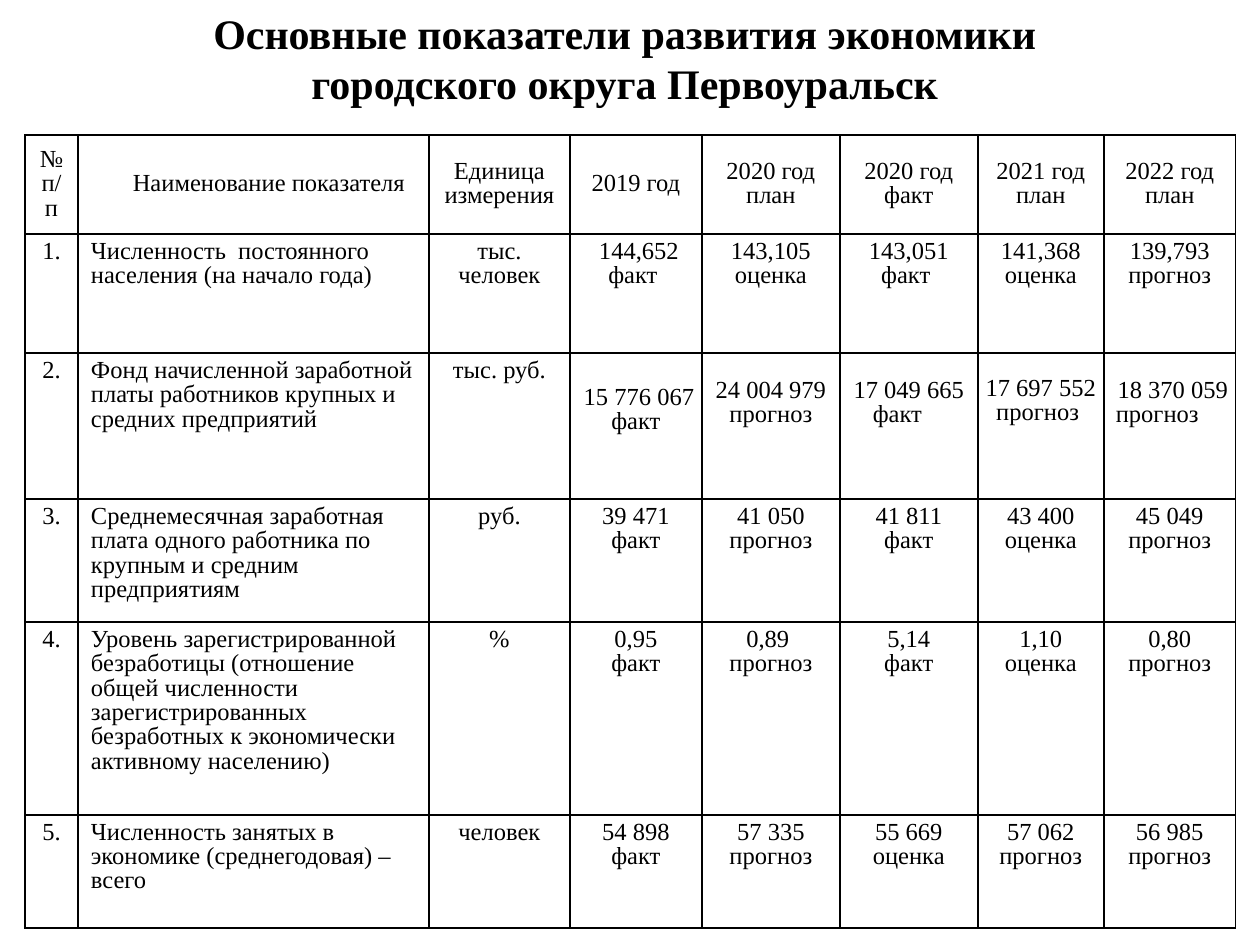
import pptx
import pptx.dml.color
import pptx.enum.text
import pptx.oxml
import pptx.oxml.ns
import pptx.util

PX = 914400 / 126
FONT = "Times New Roman"
BLACK, WHITE = "000000", "FFFFFF"
ALIGN = pptx.enum.text.PP_ALIGN
ANCHOR = pptx.enum.text.MSO_ANCHOR

TITLE = "Основные показатели развития экономики \nгородского округа Первоуральск "
COLUMNS = [53, 351, 141, 132, 138, 138, 126, 132]
ROWS = [99, 119, 146, 123, 193, 113]
CELLS = [
    ["№ п/п", "Наименование показателя", "Единица измерения", "2019 год",
     "2020 год план", "2020 год факт", "2021 год\nплан", "2022 год план"],
    ["1.", "Численность  постоянного населения (на начало года)", "тыс. человек",
     " 144,652\nфакт ", "143,105 оценка", "143,051\nфакт ",
     "141,368\nоценка", "139,793\nпрогноз"],
    ["2.", "Фонд начисленной заработной платы работников крупных и средних предприятий",
     "тыс. руб.", " 15 776 067\nфакт", "24 004 979 прогноз", "17 049 665\nфакт",
     "17 697 552\nпрогноз ", " 18 370 059\nпрогноз"],
    ["3.", "Среднемесячная заработная плата одного работника по крупным и средним предприятиям",
     "руб.", "39 471\nфакт", "41 050 прогноз", "41 811\nфакт",
     "43 400\nоценка", "45 049\nпрогноз"],
    ["4.", "Уровень зарегистрированной  безработицы (отношение общей численности "
     "зарегистрированных безработных к экономически активному населению)",
     "%", "0,95\nфакт", "0,89  прогноз", "5,14\nфакт", "1,10\nоценка", "0,80\nпрогноз"],
    ["5.", "Численность занятых в экономике (среднегодовая) – всего", "человек",
     "54 898\nфакт", "57 335 прогноз", "55 669\nоценка", "57 062\nпрогноз", "56 985\nпрогноз"],
]
SIDE_MARGINS = [13, 13, 0, 10, 10, 10]
SPECIAL_MARGINS = {
    (0, 1): {"left": 44},
    (2, 2): {"left": 3, "right": 3},
    (2, 3): {"left": 3, "right": 3, "top": 33},
    (2, 4): {"top": 26},
    (2, 5): {"top": 26},
    (2, 6): {"top": 24},
    (2, 7): {"top": 26},
}
LAST_LINE_INDENTS = {(2, 5): 33, (2, 7): 12}


def px(length):
    """Turn pixels into EMU."""
    return pptx.util.Emu(round(length * PX))


def color(value):
    """Turn a hex string into a colour."""
    return pptx.dml.color.RGBColor.from_string(value)


def write_text(frame, text, size=14, bold=False, align=ALIGN.CENTER, spacing=0.9):
    """Fill a text frame with one paragraph for each line of text."""
    frame.text = text
    for paragraph in frame.paragraphs:
        paragraph.alignment = align
        paragraph.line_spacing = spacing
        for run in paragraph.runs:
            run.font.name = FONT
            run.font.size = pptx.util.Pt(size)
            run.font.bold = bold
            run.font.color.rgb = color(BLACK)


def set_margins(item, left=13, right=13, top=6, bottom=6):
    """Set the four inner margins of a cell or text frame."""
    item.margin_left, item.margin_right = px(left), px(right)
    item.margin_top, item.margin_bottom = px(top), px(bottom)


def indent_last_line(frame, indent):
    """Align the last paragraph left at an indent."""
    paragraph = frame.paragraphs[-1]
    paragraph.alignment = ALIGN.LEFT
    paragraph._p.get_or_add_pPr().set("marL", str(px(indent)))


def style_cell(cell):
    """Give a cell thin black borders and a white fill."""
    properties = cell._tc.get_or_add_tcPr()
    for side in ("lnL", "lnR", "lnT", "lnB"):
        properties.append(pptx.oxml.parse_xml(
            f'<a:{side} {pptx.oxml.ns.nsdecls("a")} w="12700"><a:solidFill>'
            f'<a:srgbClr val="{BLACK}"/></a:solidFill></a:{side}>'))
    cell.fill.solid()
    cell.fill.fore_color.rgb = color(WHITE)


def add_title(slide):
    """Place and format the slide title."""
    title = slide.shapes.title
    title.left, title.top, title.width, title.height = px(0), px(0), px(1260), px(115)
    frame = title.text_frame
    frame.word_wrap = True
    frame.auto_size = pptx.enum.text.MSO_AUTO_SIZE.NONE
    frame.vertical_anchor = ANCHOR.MIDDLE
    set_margins(frame)
    write_text(frame, TITLE, size=24, bold=True, spacing=1.0)


def add_indicator_table(slide):
    """Add the table of economic indicators."""
    table = slide.shapes.add_table(len(ROWS), len(COLUMNS), px(25), px(135),
                                   px(sum(COLUMNS)), px(sum(ROWS))).table
    table.first_row = table.horz_banding = False
    for column, width in zip(table.columns, COLUMNS):
        column.width = px(width)
    for row, height in zip(table.rows, ROWS):
        row.height = px(height)
    for row, texts in enumerate(CELLS):
        for column, text in enumerate(texts):
            cell = table.cell(row, column)
            style_cell(cell)
            side = 13 if column < 2 else SIDE_MARGINS[row]
            margins = {"left": side, "right": side} | SPECIAL_MARGINS.get((row, column), {})
            set_margins(cell, **margins)
            cell.vertical_anchor = ANCHOR.TOP if row else ANCHOR.MIDDLE
            align = ALIGN.LEFT if row and column == 1 else ALIGN.CENTER
            write_text(cell.text_frame, text, align=align)
            if (row, column) in LAST_LINE_INDENTS:
                indent_last_line(cell.text_frame, LAST_LINE_INDENTS[row, column])


def main():
    """Build and save the presentation."""
    presentation = pptx.Presentation()
    presentation.slide_width, presentation.slide_height = px(1260), px(945)
    slide = presentation.slides.add_slide(presentation.slide_layouts[5])
    add_title(slide)
    add_indicator_table(slide)
    presentation.save("out.pptx")


if __name__ == "__main__":
    main()
